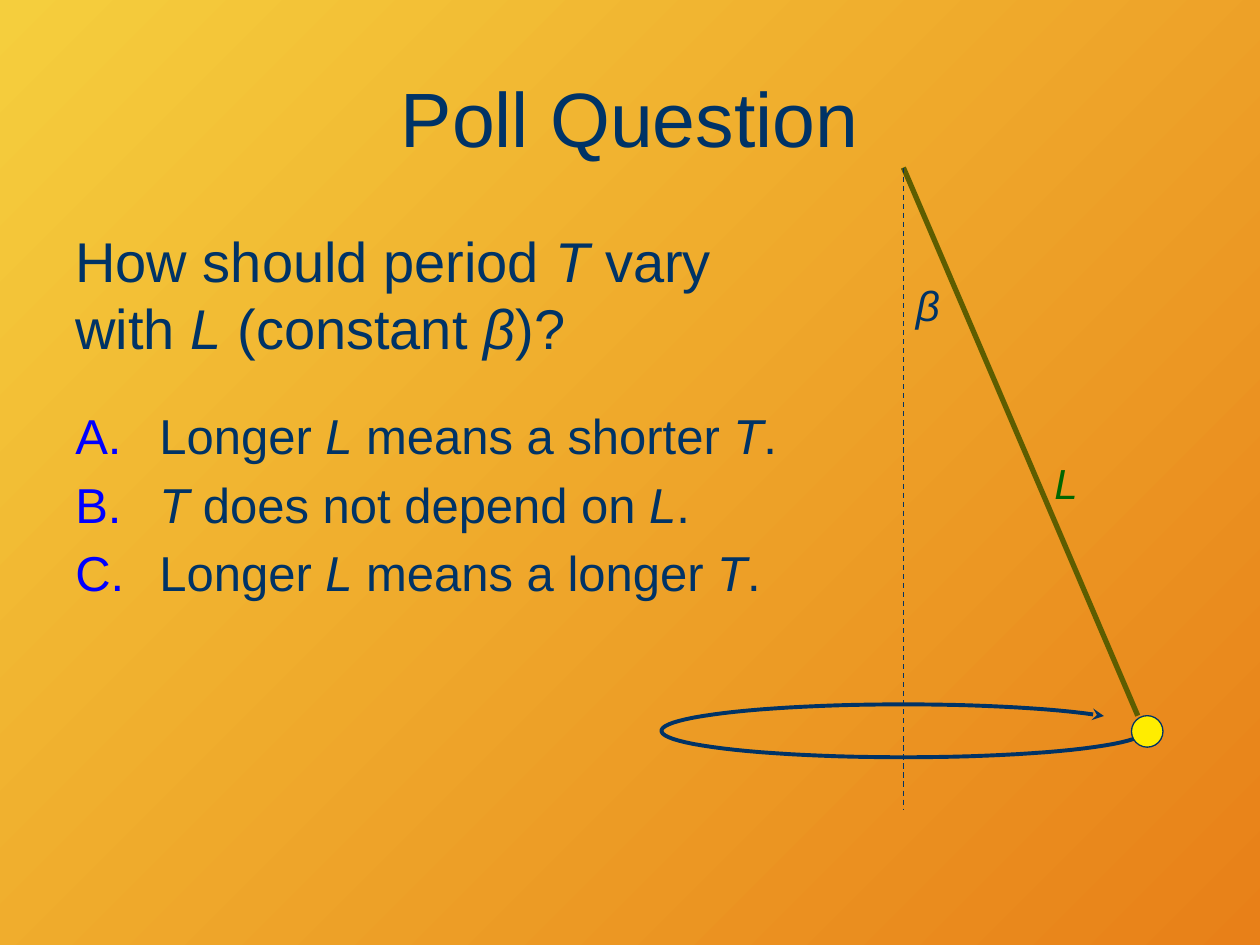
import math
from dataclasses import dataclass

import pptx
import pptx.dml.color
import pptx.enum.dml
import pptx.enum.shapes
import pptx.enum.text
import pptx.oxml
import pptx.oxml.ns
import pptx.util
from pptx.util import Inches


@dataclass(frozen=True)
class Theme:
    font: str = "Arial"
    ink: str = "003366"
    bullet: str = "0000FF"
    rod: str = "5D5D00"
    rod_label: str = "006600"
    ball: str = "FFED00"
    sky: tuple = ("F5CE3D", "E88018")
    title_size: int = 44
    body_size: int = 32
    answer_size: int = 28
    label_size: int = 24


def rgb(value):
    return pptx.dml.color.RGBColor.from_string(value)


def apply(target, values):
    for name, value in values.items():
        setattr(target, name, value)


def append_xml(parent, tag, inner="", **attributes):
    listed = "".join(f' {key}="{value}"' for key, value in attributes.items())
    namespace = pptx.oxml.ns.nsdecls("a")
    parent.append(pptx.oxml.parse_xml(f"<a:{tag} {namespace}{listed}>{inner}</a:{tag}>"))


class SlideBuilder:
    def __init__(self, page, theme):
        self.page = page
        self.theme = theme

    def background(self):
        fill = self.page.background.fill
        fill.gradient()
        fill.gradient_angle = 315  # python-pptx counts counter-clockwise
        for stop, color, position in zip(fill.gradient_stops, self.theme.sky, (0, 1)):
            stop.color.rgb = rgb(color)
            stop.position = position

    def text(self, bounds, lines, size, color=None, frame_format=None,
             align=None, space_before=0, lettered=False):
        """Add a text box; parts of a line between asterisks are italic."""
        box = self.page.shapes.add_textbox(*map(Inches, bounds))
        frame = box.text_frame
        apply(frame, {"word_wrap": True, **(frame_format or {})})
        for index, line in enumerate(lines):
            para = frame.paragraphs[0] if index == 0 else frame.add_paragraph()
            para.alignment = align
            properties = para._p.get_or_add_pPr()
            if space_before:
                append_xml(properties, "spcBef", f'<a:spcPct val="{space_before * 1000}"/>')
            if lettered:
                self.letter(properties)
            for part, words in enumerate(line.split("*")):
                if not words:
                    continue
                span = para.add_run()
                span.text = words
                apply(span.font, {"name": self.theme.font, "italic": part % 2 == 1,
                                  "size": pptx.util.Pt(size)})
                span.font.color.rgb = rgb(color or self.theme.ink)

    def letter(self, properties):
        """Number a paragraph A., B., C. with a hanging indent."""
        hanging = Inches(0.56)
        properties.set("marL", str(hanging))
        properties.set("indent", str(-hanging))
        append_xml(properties, "buClr", f'<a:srgbClr val="{self.theme.bullet}"/>')
        append_xml(properties, "buFont", typeface=self.theme.font)
        append_xml(properties, "buAutoNum", type="alphaUcPeriod")

    def outline(self, shape, color, width, dash=None):
        shape.line.color.rgb = rgb(color)
        apply(shape.line, {"width": pptx.util.Pt(width), "dash_style": dash})

    def line(self, start, end, color, width, dash=None):
        ends = map(Inches, (*start, *end))
        connector = self.page.shapes.add_connector(
            pptx.enum.shapes.MSO_CONNECTOR.STRAIGHT, *ends)
        self.outline(connector, color, width, dash)
        append_xml(connector._element.spPr, "effectLst")

    def orbit(self, center, radii, first, last, step=4):
        """Draw an open elliptical arc, clockwise in degrees, with an arrowhead."""
        points = [tuple(Inches(middle + radius * turn(math.radians(angle)))
                        for middle, radius, turn in zip(center, radii, (math.cos, math.sin)))
                  for angle in range(first, last + 1, step)]
        builder = self.page.shapes.build_freeform(*points[0])
        builder.add_line_segments(points[1:], close=False)
        arc = builder.convert_to_shape()
        arc.fill.background()
        arc.shadow.inherit = False
        self.outline(arc, self.theme.ink, 2.25)
        append_xml(arc.line._get_or_add_ln(), "tailEnd", type="stealth")

    def ball(self, left, top, diameter):
        bounds = map(Inches, (left, top, diameter, diameter))
        ball = self.page.shapes.add_shape(pptx.enum.shapes.MSO_SHAPE.OVAL, *bounds)
        ball.shadow.inherit = False
        ball.fill.solid()
        ball.fill.fore_color.rgb = rgb(self.theme.ball)
        self.outline(ball, self.theme.ink, 0.75)


def main():
    deck = pptx.Presentation()
    apply(deck, {"slide_width": Inches(10), "slide_height": Inches(7.5)})
    theme = Theme()
    slide = SlideBuilder(deck.slides.add_slide(deck.slide_layouts[6]), theme)
    slide.background()

    slide.text((0.5, 0.3, 9, 1.25), ["Poll Question"], theme.title_size,
               frame_format={"vertical_anchor": pptx.enum.text.MSO_ANCHOR.MIDDLE},
               align=pptx.enum.text.PP_ALIGN.CENTER)
    slide.text((0.5, 1.75, 5.33, 1.25),
               ["How should period *T* vary with *L* (constant *β*)?"],
               theme.body_size, space_before=20)
    answers = [" Longer *L* means a shorter *T*.",
               " *T* does not depend on *L*.",
               " Longer *L* means a longer *T*."]
    slide.text((0.5, 3.17, 6, 1.92), answers, theme.answer_size,
               space_before=20, lettered=True)

    pivot = (7.17, 1.33)
    slide.orbit(center=(pivot[0], 5.8), radii=(1.92, 0.21), first=14, last=326)
    slide.ball(8.98, 5.68, 0.25)
    slide.line(pivot, (9.03, 5.68), theme.rod, 3)
    slide.line(pivot, (pivot[0], 6.42), theme.ink, 0.75,
               pptx.enum.dml.MSO_LINE.DASH)

    label_format = {"word_wrap": False,
                    "auto_size": pptx.enum.text.MSO_AUTO_SIZE.SHAPE_TO_FIT_TEXT}
    for bounds, symbol, color in (((7.17, 2.17, 0.38, 0.5), "*β*", theme.ink),
                                  ((8.27, 3.58, 0.39, 0.5), "*L*", theme.rod_label)):
        slide.text(bounds, [symbol], theme.label_size, color, label_format)

    deck.save("out.pptx")


if __name__ == "__main__":
    main()
